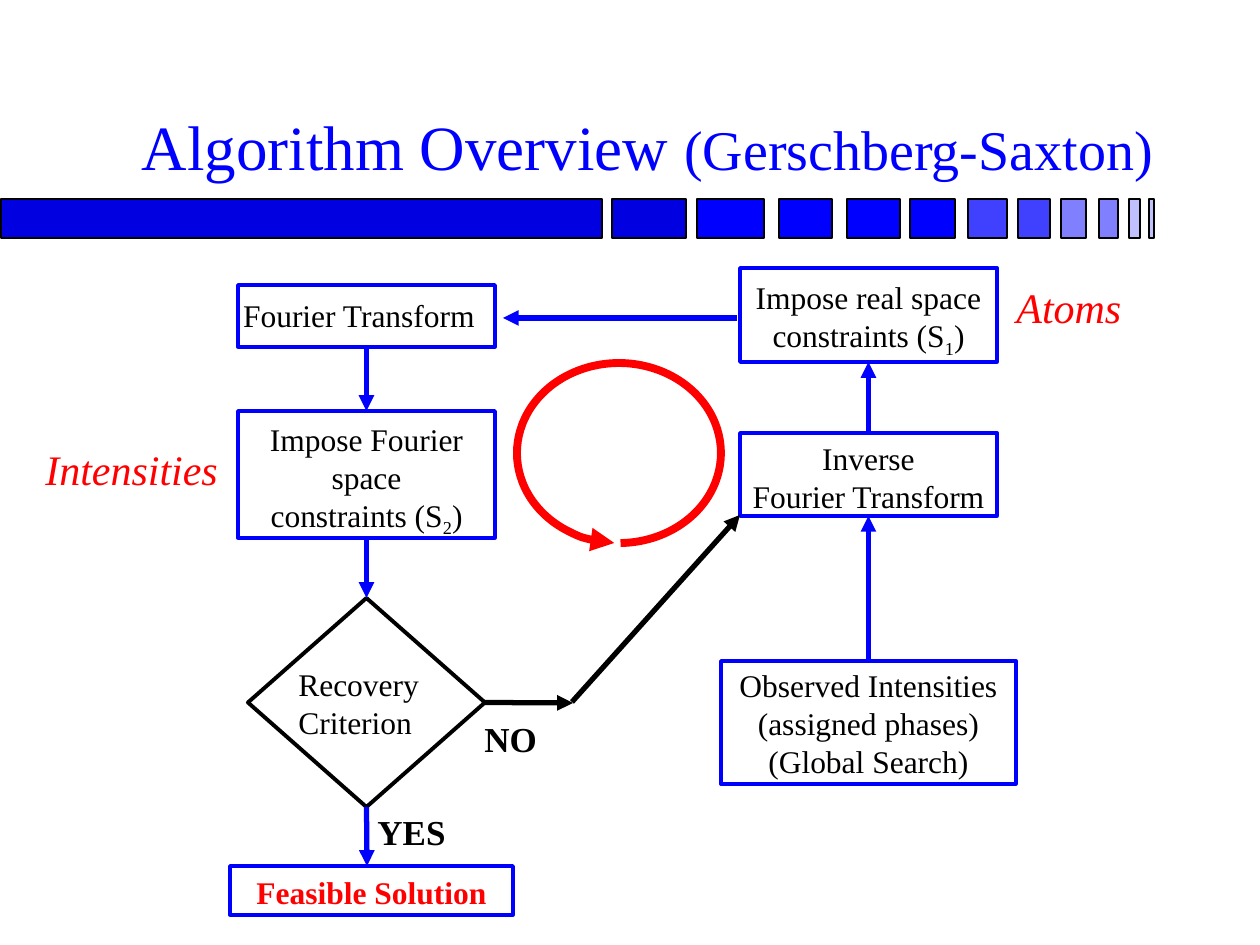
"""Build the Algorithm Overview flowchart slide."""
from lxml.etree import SubElement
from pptx import Presentation
from pptx.dml.color import RGBColor as RGB
from pptx.enum.shapes import MSO_CONNECTOR, MSO_SHAPE as SHAPE
from pptx.enum.text import MSO_ANCHOR as ANCHOR, PP_ALIGN as ALIGN
from pptx.oxml.ns import qn
from pptx.util import Pt

PX = 914400 / 126
FONT = "Times New Roman"
C = {"blue": "0000FF", "black": "000000", "red": "FF0000", "navy": "0000E0",
     "mid": "4040FF", "light": "8080FF", "pale": "C0C0FF"}


def px(*lengths):
    return [round(n * PX) for n in lengths]


def write(tf, lines, size, color, align=ALIGN.LEFT, bold=False, italic=False):
    for i, line in enumerate(lines):
        p = tf.paragraphs[0] if i == 0 else tf.add_paragraph()
        p.alignment = align
        f = p.font
        f.name, f.size, f.bold, f.italic = FONT, Pt(size), bold, italic
        f.color.rgb = RGB.from_string(C[color])
        for j, part in enumerate(line.split("_")):
            r = p.add_run()
            r.text = part
            if j == 1:
                r._r.get_or_add_rPr().set("baseline", "-25000")


prs = Presentation()
prs.slide_width, prs.slide_height = px(1260, 945)
s = prs.slides.add_slide(prs.slide_layouts[5])

bars = [(1, 601, "navy"), (612, 74, "navy"), (697, 67, "blue"), (779, 53, "blue"),
        (847, 53, "blue"), (910, 45, "blue"), (968, 39, "mid"), (1018, 32, "mid"),
        (1061, 25, "light"), (1099, 19, "light"), (1129, 11, "pale"), (1149, 5, "pale")]
for x, w, color in bars:
    sp = s.shapes.add_shape(SHAPE.RECTANGLE, *px(x, 199, w, 39))
    sp.shadow.inherit = False
    sp.fill.solid()
    sp.fill.fore_color.rgb = RGB.from_string(C[color])
    sp.line.color.rgb = RGB.from_string(C["black"])
    sp.line.width = Pt(1)

title = s.shapes.title
title.left, title.top, title.width, title.height = px(95, 92, 1071, 97)
tf = title.text_frame
tf.vertical_anchor = ANCHOR.BOTTOM
p = tf.paragraphs[0]
p.alignment = ALIGN.RIGHT
p.font.name = FONT
p.font.color.rgb = RGB.from_string(C["blue"])
for text, size in [("Algorithm Overview ", 36), ("(Gerschberg-Saxton)", 32)]:
    r = p.add_run()
    r.text = text
    r.font.size = Pt(size)

boxes = [
    ("fourier", 238, 285, 257, 62, 11, ["Fourier Transform"]),
    ("intensities", 238, 411, 257, 127, 9, ["Impose Fourier space", "constraints (S_2_)"]),
    ("atoms", 740, 268, 257, 94, 10, ["Impose real space", "constraints (S_1_)"]),
    ("inverse", 740, 433, 257, 83, 6, ["Inverse", "Fourier Transform"]),
    ("observed", 721, 661, 295, 123, 5,
     ["Observed Intensities", "(assigned phases)", "(Global Search)"]),
    ("feasible", 230, 866, 283, 49, 7, ["Feasible Solution"]),
    ("decision", 248, 598, 237, 209, 0, []),
]
nodes = {}
for name, x, y, w, h, inset, lines in boxes:
    decision, final, first = (name == n for n in ("decision", "feasible", "fourier"))
    kind = SHAPE.FLOWCHART_DECISION if decision else SHAPE.RECTANGLE
    sp = nodes[name] = s.shapes.add_shape(kind, *px(x, y, w, h))
    sp.shadow.inherit = False
    sp.fill.background()
    sp.line.color.rgb = RGB.from_string(C["black" if decision else "blue"])
    sp.line.width = Pt(2.25 if decision else 2)
    tf = sp.text_frame
    tf.word_wrap = True
    tf.vertical_anchor = ANCHOR.TOP
    tf.margin_top, tf.margin_bottom = px(inset, 0)
    tf.margin_left, tf.margin_right = px(5 if first else 12, 12)
    write(tf, lines, 18, "red" if final else "black",
          ALIGN.LEFT if first else ALIGN.CENTER, bold=final)

arrows = [
    ((368, 347), (368, 411), "blue", ("fourier", 2), ("intensities", 0)),
    ((368, 538), (368, 598), "blue", ("intensities", 2), ("decision", 0)),
    ((367, 807), (367, 866), "blue", ("decision", 2), None),
    ((869, 433), (869, 362), "blue", ("inverse", 0), ("atoms", 2)),
    ((869, 661), (869, 516), "blue", ("observed", 0), ("inverse", 2)),
    ((737, 318), (503, 318), "blue", None, None),
    ((485, 703), (573, 703), "black", ("decision", 3), None),
    ((572, 702), (740, 515), "black", None, None),
]
for start, end, color, source, target in arrows:
    cx = s.shapes.add_connector(MSO_CONNECTOR.STRAIGHT, *px(*start, *end))
    if source:
        cx.begin_connect(nodes[source[0]], source[1])
    if target:
        cx.end_connect(nodes[target[0]], target[1])
    cx.line.color.rgb = RGB.from_string(C[color])
    cx.line.width = Pt(3)
    SubElement(cx.line._get_or_add_ln(), qn("a:tailEnd"), type="triangle")
    SubElement(cx._element.spPr, qn("a:effectLst"))

loop = s.shapes.add_shape(SHAPE.ARC, *px(517, 363, 204, 180))
loop.shadow.inherit = False
loop.adjustments[0], loop.adjustments[1] = 55.8, 53.4
loop.fill.background()
loop.line.color.rgb = RGB.from_string(C["red"])
loop.line.width = Pt(4.5)
SubElement(loop.line._get_or_add_ln(), qn("a:headEnd"), type="triangle")

labels = [
    (286, 659, 154, 88, ["Recovery", "Criterion"], 18, "black", False, False),
    (365, 804, 93, 54, ["YES"], 20, "black", True, False),
    (472, 711, 78, 55, ["NO"], 20, "black", True, False),
    (1004, 275, 158, 63, ["Atoms"], 24, "red", False, True),
    (33, 437, 234, 63, ["Intensities"], 24, "red", False, True),
]
for x, y, w, h, lines, size, color, bold, italic in labels:
    tf = s.shapes.add_textbox(*px(x, y, w, h)).text_frame
    tf.word_wrap = True
    write(tf, lines, size, color, bold=bold, italic=italic)

prs.save("out.pptx")
